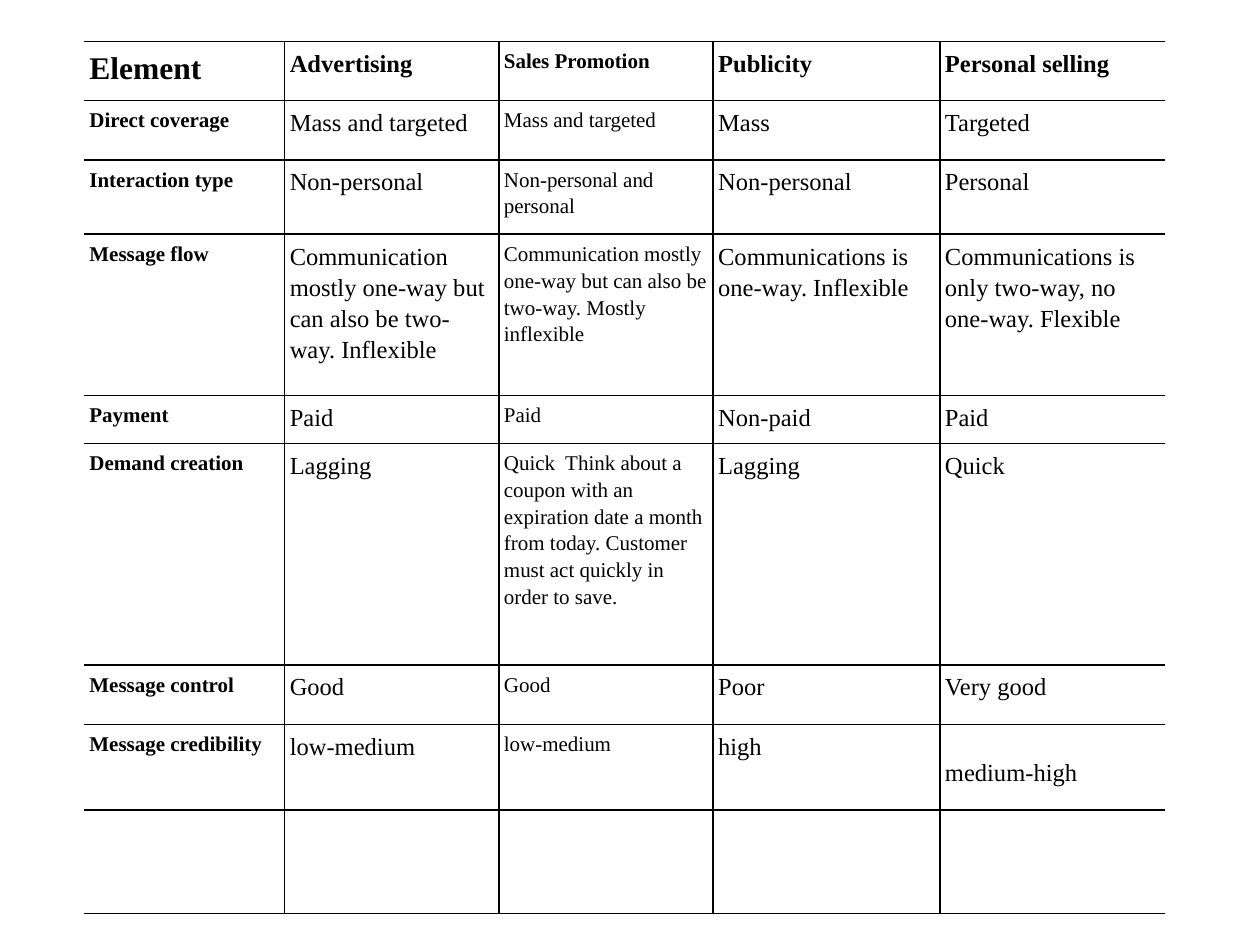
from dataclasses import dataclass
from lxml.etree import SubElement
from pptx import Presentation
from pptx.dml.color import RGBColor
from pptx.oxml.ns import qn
from pptx.util import Inches, Pt


@dataclass(frozen=True)
class Theme:
    font: str = "Times New Roman"
    ink: str = "000000"
    title: int = 18
    large: int = 14
    small: int = 12
    line: int = 1


THEME = Theme()
PAD = 0.04
DROP = 0.21  # extra space above the lowered entry
COLS = [1.59, 1.7, 1.7, 1.8, 1.79]
ROWS = [
    (0.47, ["Element", "Advertising", "Sales Promotion", "Publicity",
            "Personal selling"]),
    (0.47, ["Direct coverage", "Mass and targeted", "Mass and targeted",
            "Mass", "Targeted"]),
    (0.59, ["Interaction type", "Non-personal", "Non-personal and personal",
            "Non-personal", "Personal"]),
    (1.28, ["Message flow",
            "Communication mostly one-way but can also be two-way. Inflexible",
            "Communication mostly one-way but can also be two-way. "
            "Mostly inflexible",
            "Communications is one-way. Inflexible",
            "Communications is only two-way, no one-way. Flexible"]),
    (0.38, ["Payment", "Paid", "Paid", "Non-paid", "Paid"]),
    (1.76, ["Demand creation", "Lagging",
            "Quick  Think about a coupon with an expiration date a month "
            "from today. Customer must act quickly in order to save.",
            "Lagging", "Quick"]),
    (0.47, ["Message control", "Good", "Good", "Poor", "Very good"]),
    (0.68, ["Message credibility", "low-medium", "low-medium", "high",
            "medium-high"]),
    (0.82, [""] * len(COLS)),
]


def set_edges(cell, col):
    """Rule every side except the outer left and right."""
    props = cell._tc.get_or_add_tcPr()
    shown = {"L": col > 0, "R": col < len(COLS) - 1, "T": True, "B": True}
    for spot, (side, on) in enumerate(shown.items()):
        edge = SubElement(props, qn(f"a:ln{side}"), w=str(Pt(THEME.line)))
        if on:
            fill = SubElement(edge, qn("a:solidFill"))
            SubElement(fill, qn("a:srgbClr"), val=THEME.ink)
        else:
            SubElement(edge, qn("a:noFill"))
        props.insert(spot, edge)


def set_text(cell, text, size, bold):
    cell.text_frame.text = text
    para = cell.text_frame.paragraphs[0]
    para.line_spacing = 1.15
    para.space_after = Pt(5.8)
    for run in para.runs:
        font = run.font
        font.name, font.size, font.bold = THEME.font, Pt(size), bold
        font.color.rgb = RGBColor.from_string(THEME.ink)


def pick_size(row, col):
    if row == col == 0:
        return THEME.title
    return THEME.small if col in (0, 2) else THEME.large


def add_grid(slide, left, top, width, height):
    """Comparison of the promotion elements."""
    frame = slide.shapes.add_table(len(ROWS), len(COLS), Inches(left),
                                   Inches(top), Inches(width), Inches(height))
    table = frame.table
    table.first_row = table.horz_banding = False
    for col, size in enumerate(COLS):
        table.columns[col].width = Inches(size * width / sum(COLS))
    total = sum(tall for tall, _ in ROWS)
    for row, (tall, texts) in enumerate(ROWS):
        table.rows[row].height = Inches(tall * height / total)
        for col, text in enumerate(texts):
            cell = table.cell(row, col)
            cell.margin_left = cell.margin_right = Inches(PAD)
            cell.margin_top = cell.margin_bottom = Inches(PAD)
            cell.fill.background()
            set_edges(cell, col)
            if text:
                set_text(cell, text, pick_size(row, col), 0 in (row, col))
    # The last rating sits one line lower
    table.cell(len(ROWS) - 2, len(COLS) - 1).margin_top = Inches(PAD + DROP)


def main():
    deck = Presentation()
    deck.slide_width, deck.slide_height = Inches(10), Inches(7.5)
    slide = deck.slides.add_slide(deck.slide_layouts[6])
    add_grid(slide, 0.67, 0.33, 8.58, 6.92)
    deck.save("out.pptx")


if __name__ == "__main__":
    main()
